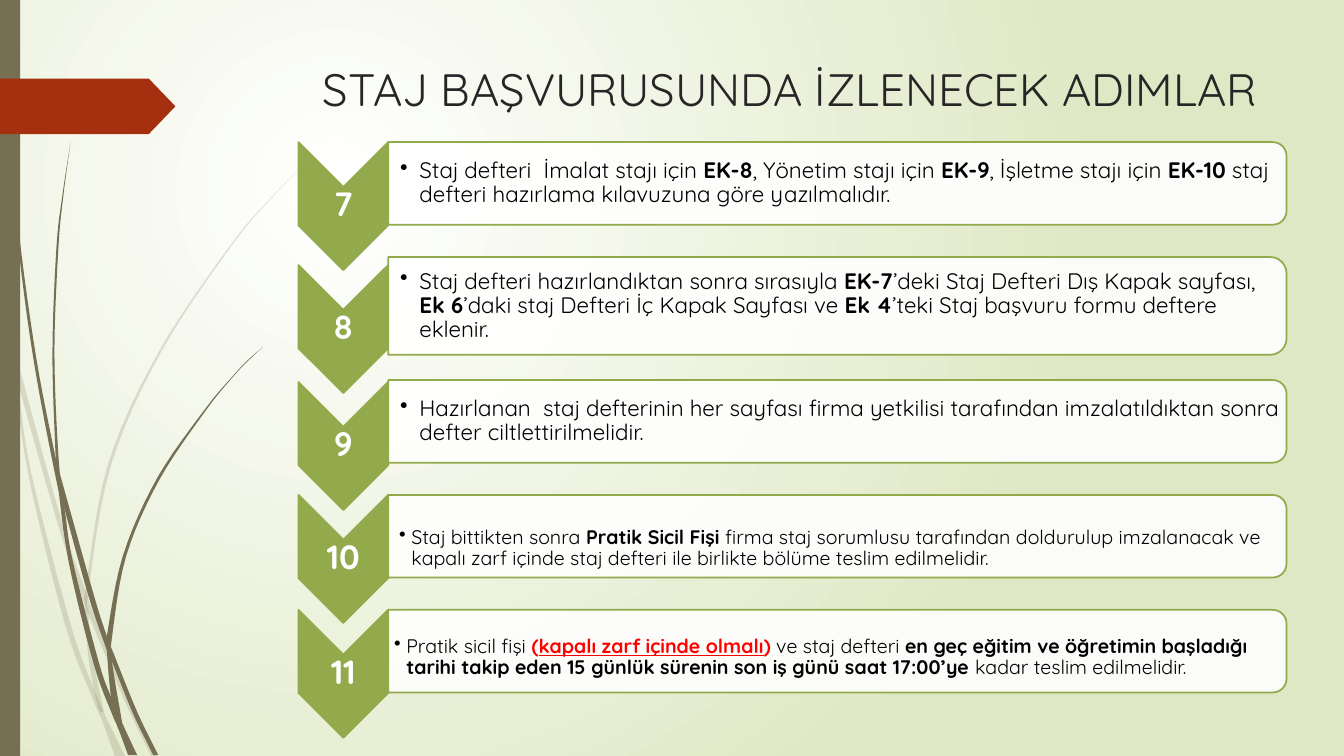
from dataclasses import dataclass

from lxml.etree import SubElement
from pptx import Presentation
from pptx.dml.color import RGBColor
from pptx.enum.shapes import MSO_SHAPE as Shape
from pptx.enum.text import MSO_ANCHOR as Anchor, PP_ALIGN as Align
from pptx.oxml.ns import qn
from pptx.util import Pt

PX = 9144
SLIDE_W, SLIDE_H = 1333, 750
FONT = "Quicksand"
OLIVE, GREEN, WHITE, BLACK, RED = "766F54", "92AA4C", "FFFFFF", "000000", "FF0000"
CHEVRON_X, CHEVRON_W, CHEVRON_H = 296, 89, 127
CARD_X, CARD_W = 385, 891

Point = tuple[float, float]


@dataclass
class Blade:
    left: list[Point]
    right: list[Point]
    alpha: int = 100


@dataclass
class Span:
    text: str
    bold: bool = False
    color: str = BLACK
    underline: bool = False


@dataclass
class Step:
    number: int
    chevron_y: int
    card_y: int
    card_h: int
    spans: list[Span]
    size: int = 16
    inset: int = 12
    indent: int = 19
    drop: int = 1


BLADES = [
    Blade([(0, 282), (9, 322), (14, 345), (62, 520), (85, 586), (92, 607), (127, 692), (155, 750)],
          [(0, 299), (17, 376), (58, 522), (84, 599), (88, 610), (123, 694), (150, 750)], 20),
    Blade([(11, 350), (28, 470), (65, 621), (92, 693), (101, 714), (114, 750)],
          [(11, 350), (17, 376), (31, 469), (70, 619), (93, 683), (105, 711), (124, 750)], 20),
    Blade([(312, 153), (268, 197), (228, 244), (158, 348), (107, 461), (85, 584), (84, 599),
           (87, 646), (93, 683), (99, 707)],
          [(312, 153), (268, 198), (229, 245), (160, 349), (110, 462), (88, 584), (88, 610),
           (91, 646), (103, 706)], 20),
    Blade([(3, 0), (4, 48), (7, 110), (17, 233), (33, 355), (56, 477), (64, 505), (88, 592),
           (106, 645), (111, 656), (132, 708), (152, 749)],
          [(4, 0), (5, 48), (8, 109), (19, 232), (36, 355), (55, 453), (60, 472), (93, 590),
           (106, 631), (113, 649), (136, 706), (157, 749)]),
    Blade([(57, 477), (68, 557), (93, 659), (111, 708), (117, 722), (127, 749)],
          [(57, 477), (64, 505), (72, 556), (98, 657), (110, 691), (122, 719), (136, 749)]),
    Blade([(70, 141), (62, 193), (56, 245), (52, 349), (55, 449), (57, 477)],
          [(70, 141), (63, 193), (58, 245), (54, 349), (58, 453), (64, 505)]),
    Blade([(261, 344), (245, 358), (231, 373), (204, 405), (156, 474), (122, 551), (106, 631),
           (106, 645), (110, 691), (117, 722)],
          [(261, 344), (245, 359), (231, 374), (205, 406), (158, 476), (125, 552), (111, 633),
           (111, 656), (121, 716)]),
]

STEPS = [
    Step(7, 141, 141, 82, [
        Span("Staj defteri  İmalat stajı için "), Span("EK-8", True),
        Span(", Yönetim stajı için "), Span("EK-9", True),
        Span(", İşletme stajı için "), Span("EK-10", True),
        Span(" staj defteri hazırlama kılavuzuna göre yazılmalıdır.")]),
    Step(8, 263, 255, 97, [
        Span("Staj defteri hazırlandıktan sonra sırasıyla "), Span("EK-7", True),
        Span("’deki Staj Defteri Dış Kapak sayfası, "), Span("Ek 6", True),
        Span("’daki staj Defteri İç Kapak Sayfası ve "), Span("Ek 4", True),
        Span("’teki Staj başvuru formu deftere eklenir.")]),
    Step(9, 379, 377, 82, [
        Span("Hazırlanan  staj defterinin her sayfası firma yetkilisi tarafından "
             "imzalatıldıktan sonra defter ciltlettirilmelidir.")]),
    Step(10, 491, 491, 82, [
        Span("Staj bittikten sonra "), Span("Pratik Sicil Fişi ", True),
        Span("firma staj sorumlusu tarafından doldurulup imzalanacak ve kapalı zarf içinde "
             "staj defteri ile birlikte bölüme teslim edilmelidir.")],
         size=14, inset=11, indent=12, drop=25),
    Step(11, 605, 605, 82, [
        Span("Pratik sicil fişi "), Span("(", True, RED),
        Span("kapalı zarf içinde olmalı", True, RED, True), Span(")", True, RED),
        Span(" ve staj defteri "),
        Span("en geç eğitim ve öğretimin başladığı tarihi takip eden 15 günlük sürenin "
             "son iş günü saat 17:00’ye", True),
        Span(" kadar teslim edilmelidir.")],
         size=14, inset=6, indent=12, drop=14),
]


def rgb(value: str) -> RGBColor:
    return RGBColor.from_string(value)


def paint(s, fill: str, alpha: int = 100, line: str | None = None) -> None:
    s.shadow.inherit = False
    s.fill.solid()
    s.fill.fore_color.rgb = rgb(fill)
    if alpha < 100:
        color = s.fill._xPr.find(qn("a:solidFill"))[0]
        SubElement(color, qn("a:alpha")).set("val", str(alpha * 1000))
    if line:
        s.line.color.rgb = rgb(line)
        s.line.width = Pt(1.25)
    else:
        s.line.fill.background()


def add_preset(slide, kind: Shape, x: int, y: int, w: int, h: int):
    return slide.shapes.add_shape(kind, x * PX, y * PX, w * PX, h * PX)


def add_turned(slide, kind: Shape, x: int, y: int, w: int, h: int):
    """Add a quarter-turned shape that covers the given box once turned."""
    left, top = (2 * x + w - h) * PX // 2, (2 * y + h - w) * PX // 2
    s = slide.shapes.add_shape(kind, left, top, h * PX, w * PX)
    s.rotation = 90
    return s


def add_text(slide, x: int, y: int, w: int, h: int, spans: list[Span], size: float,
             anchor: Anchor = Anchor.MIDDLE, align: Align = Align.CENTER,
             insets: tuple[int, int, int, int] = (2, 2, 2, 2)):
    tf = slide.shapes.add_textbox(x * PX, y * PX, w * PX, h * PX).text_frame
    tf.word_wrap = True
    tf.vertical_anchor = anchor
    tf.margin_left, tf.margin_top, tf.margin_right, tf.margin_bottom = (i * PX for i in insets)
    p = tf.paragraphs[0]
    p.alignment = align
    for span in spans:
        r = p.add_run()
        r.text = span.text
        r.font.name, r.font.size = FONT, Pt(size)
        r.font.bold, r.font.underline = span.bold, span.underline
        r.font.color.rgb = rgb(span.color)
    return p


def smooth(nodes: list[Point], cuts: int = 6) -> list[Point]:
    """Sample a Catmull-Rom curve through the nodes."""
    ends = [nodes[0], *nodes, nodes[-1]]
    points = []
    for a, b, c, d in zip(ends, ends[1:], ends[2:], ends[3:]):
        for t in (i / cuts for i in range(cuts)):
            points.append(tuple(
                (2 * q + (r - p) * t + (2 * p - 5 * q + 4 * r - s) * t ** 2
                 + (3 * q - p - 3 * r + s) * t ** 3) / 2
                for p, q, r, s in zip(a, b, c, d)))
    return points + [nodes[-1]]


def draw_blade(slide, blade: Blade) -> None:
    outline = smooth(blade.left) + smooth(blade.right)[::-1]
    first, *rest = [(x * PX, y * PX) for x, y in outline]
    builder = slide.shapes.build_freeform(*first, scale=1.0)
    builder.add_line_segments(rest, close=True)
    paint(builder.convert_to_shape(), OLIVE, blade.alpha)


def draw_step(slide, step: Step) -> None:
    s = add_turned(slide, Shape.CHEVRON, CHEVRON_X, step.chevron_y, CHEVRON_W, CHEVRON_H)
    paint(s, GREEN, line=GREEN)
    add_text(slide, CHEVRON_X, step.chevron_y + 44, CHEVRON_W, 38,
             [Span(str(step.number), True, WHITE)], 24).line_spacing = 0.9
    s = add_turned(slide, Shape.ROUND_2_SAME_RECTANGLE, CARD_X, step.card_y, CARD_W, step.card_h)
    paint(s, WHITE, 90, GREEN)
    p = add_text(slide, CARD_X, step.card_y + 4, CARD_W - 4, step.card_h - 8, step.spans,
                 step.size, align=Align.LEFT, insets=(step.inset, step.drop, 1, 1))
    p.line_spacing = 0.9
    pPr = p._p.get_or_add_pPr()
    pPr.set("marL", str(step.indent * PX))
    pPr.set("indent", str(-step.indent * PX))
    SubElement(pPr, qn("a:buChar")).set("char", "•")


def set_background(slide) -> None:
    fill = slide.background.fill
    fill.gradient()
    for stop, color in zip(fill.gradient_stops, (WHITE, "DFE8C4")):
        stop.color.rgb = rgb(color)
    grad = slide._element.find(".//" + qn("a:gradFill"))
    grad.remove(grad.find(qn("a:lin")))
    circle = SubElement(grad, qn("a:path"))
    circle.set("path", "circle")
    target = SubElement(circle, qn("a:fillToRect"))
    for side, value in zip("ltrb", (50, 50, 100, 100)):
        target.set(side, str(value * 1000))


def main() -> None:
    prs = Presentation()
    prs.slide_width, prs.slide_height = SLIDE_W * PX, SLIDE_H * PX
    slide = prs.slides.add_slide(prs.slide_layouts[6])
    set_background(slide)
    for blade in BLADES:
        draw_blade(slide, blade)
    paint(add_preset(slide, Shape.RECTANGLE, 0, 0, 20, SLIDE_H), OLIVE)
    arrow = add_preset(slide, Shape.PENTAGON, 0, 78, 174, 55)
    arrow.adjustments[0] = 0.48
    paint(arrow, "A53010")
    add_text(slide, 296, 0, 975, 140, [Span("STAJ BAŞVURUSUNDA İZLENECEK ADIMLAR", color="262626")],
             32.4, anchor=Anchor.TOP, insets=(10, 61, 10, 5))
    for step in STEPS:
        draw_step(slide, step)
    prs.save("out.pptx")


if __name__ == "__main__":
    main()
